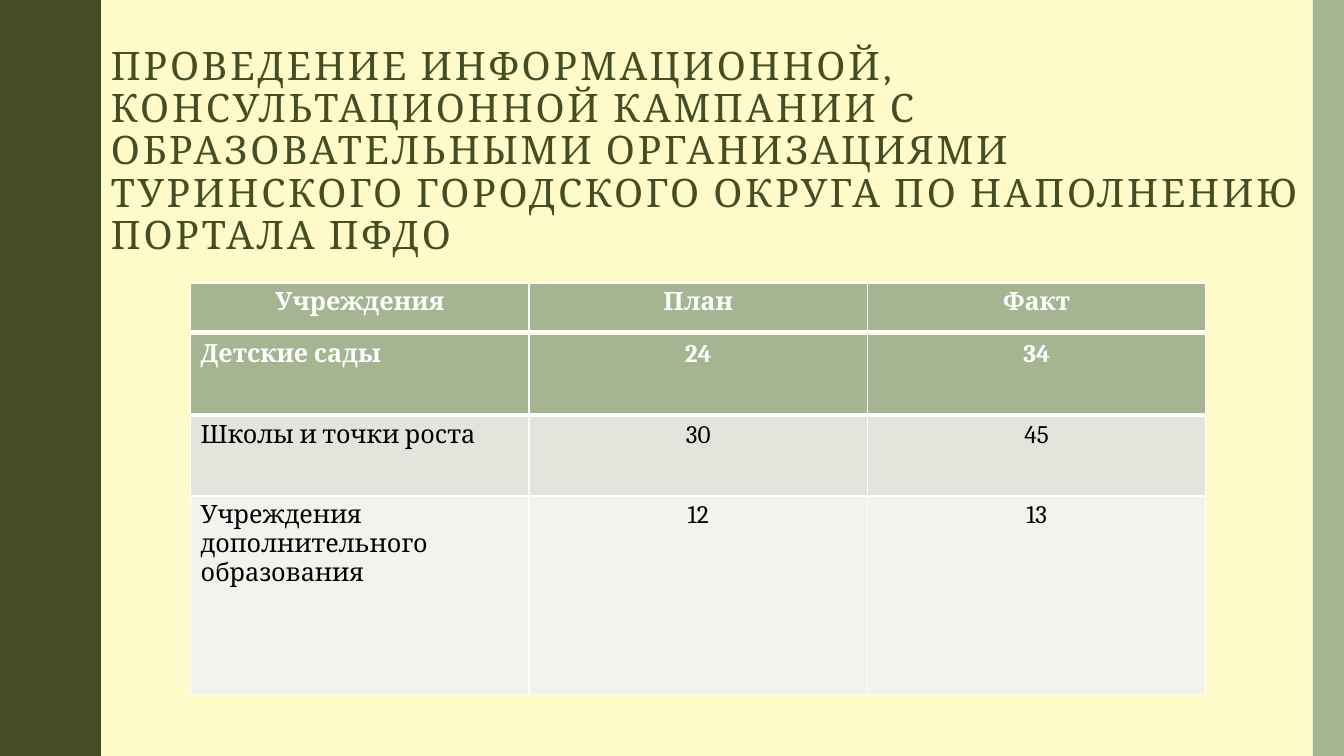
from lxml import etree
from pptx import Presentation
from pptx.dml.color import RGBColor
from pptx.enum.shapes import MSO_SHAPE
from pptx.enum.text import MSO_ANCHOR, MSO_AUTO_SIZE, PP_ALIGN
from pptx.oxml.ns import qn
from pptx.util import Inches, Pt

RECTANGLE = MSO_SHAPE.RECTANGLE
MIDDLE = MSO_ANCHOR.MIDDLE
NO_AUTOFIT = MSO_AUTO_SIZE.NONE
LEFT, CENTER = PP_ALIGN.LEFT, PP_ALIGN.CENTER

FONT = "Cambria"
COLORS = {
    "cream": "FEFAC9",
    "dark": "444D26",
    "sage": "A5B592",
    "band": "E1E5DC",
    "pale": "F0F3EE",
    "white": "FFFFFF",
    "black": "000000",
}
TITLE = (
    "ПРОВЕДЕНИЕ ИНФОРМАЦИОННОЙ, КОНСУЛЬТАЦИОННОЙ КАМПАНИИ С "
    "ОБРАЗОВАТЕЛЬНЫМИ ОРГАНИЗАЦИЯМИ ТУРИНСКОГО ГОРОДСКОГО ОКРУГА "
    "ПО НАПОЛНЕНИЮ ПОРТАЛА ПФДО"
)
HEADINGS = ["Учреждения", "План", "Факт"]
RESULTS = [
    ["Детские сады", "24", "34"],
    ["Школы и точки роста", "30", "45"],
    ["Учреждения дополнительного образования", "12", "13"],
]
TABLE_LEFT, COLUMN_WIDTH = 1.89, 3.357

# Half a wave from trough to crest; the other half mirrors it
WAVE_PERIOD = 1.5
HALF_WAVE = [
    (0.78, 0), (0.78, 0.07), (0.79, 0.14), (0.8, 0.2), (0.81, 0.25),
    (0.83, 0.29), (0.85, 0.33), (0.87, 0.38), (0.89, 0.42), (0.91, 0.46),
    (0.93, 0.5), (0.95, 0.55), (0.96, 0.61), (0.97, 0.68), (0.97, 0.75),
]


def rgb(name):
    return RGBColor.from_string(COLORS[name])


def paint(shape, color):
    shape.shadow.inherit = False
    shape.fill.solid()
    shape.fill.fore_color.rgb = rgb(color)
    shape.line.fill.background()


def add_span(para, text, size, color, bold=False):
    span = para.add_run()
    span.text = text
    span.font.name = FONT
    span.font.size = Pt(size)
    span.font.bold = bold
    span.font.color.rgb = rgb(color)
    return span


def add_wavy_edge(page, height):
    wave = HALF_WAVE + [(x, WAVE_PERIOD - y) for x, y in HALF_WAVE[-2::-1]]
    count = round(height / WAVE_PERIOD)
    points = [(x, y + i * WAVE_PERIOD) for i in range(count) for x, y in wave]
    builder = page.shapes.build_freeform(0, 0, scale=Inches(1))
    builder.add_line_segments(points + [(0, height)], close=True)
    paint(builder.convert_to_shape(), "dark")


def add_side_bar(page):
    bar = page.shapes.add_shape(
        RECTANGLE, Inches(13.02), 0, Inches(0.31), Inches(7.5))
    paint(bar, "sage")


def set_title(page):
    title = page.shapes.title
    title.left, title.top = Inches(1), Inches(0.42)
    title.width, title.height = Inches(12.01), Inches(2.18)
    frame = title.text_frame
    frame.word_wrap = True
    frame.auto_size = NO_AUTOFIT
    frame.vertical_anchor = MIDDLE
    para = frame.paragraphs[0]
    para.alignment = LEFT
    para.line_spacing = 0.9
    span = add_span(para, TITLE, 28, "dark")
    span.font._element.set("spc", "200")


def set_borders(cell, bottom_width):
    props = cell._tc.get_or_add_tcPr()
    widths = {"a:lnL": 1, "a:lnR": 1, "a:lnT": 1, "a:lnB": bottom_width}
    for place, (tag, width) in enumerate(widths.items()):
        line = etree.Element(qn(tag), w=str(Pt(width)))
        fill = etree.SubElement(line, qn("a:solidFill"))
        etree.SubElement(fill, qn("a:srgbClr"), val=COLORS["white"])
        props.insert(place, line)


def fill_cell(cell, text, align, fill, strong):
    cell.fill.solid()
    cell.fill.fore_color.rgb = rgb(fill)
    para = cell.text_frame.paragraphs[0]
    para.alignment = align
    add_span(para, text, 18, "white" if strong else "black", strong)
    set_borders(cell, 3 if strong else 1)


def add_results_table(page, top, rows, heights, fills, first_align):
    columns = len(HEADINGS)
    frame = page.shapes.add_table(
        len(rows), columns, Inches(TABLE_LEFT), Inches(top),
        Inches(COLUMN_WIDTH * columns), Inches(sum(heights)))
    table = frame.table
    for column in table.columns:
        column.width = Inches(COLUMN_WIDTH)
    for r, (texts, height, fill) in enumerate(zip(rows, heights, fills)):
        table.rows[r].height = Inches(height)
        for c, text in enumerate(texts):
            align = CENTER if c else first_align
            fill_cell(table.cell(r, c), text, align, fill, r == 0)


def main():
    deck = Presentation()
    deck.slide_width, deck.slide_height = Inches(13.33), Inches(7.5)
    page = deck.slides.add_slide(deck.slide_layouts[5])
    page.background.fill.solid()
    page.background.fill.fore_color.rgb = rgb("cream")

    # Decoration and title
    add_wavy_edge(page, 7.5)
    add_side_bar(page)
    set_title(page)

    # Heading strip and the results below it
    add_results_table(page, 2.81, [HEADINGS], [0.48], ["sage"], CENTER)
    add_results_table(page, 3.32, RESULTS, [0.8, 0.8, 1.97],
                      ["sage", "band", "pale"], LEFT)
    deck.save("out.pptx")


if __name__ == "__main__":
    main()
